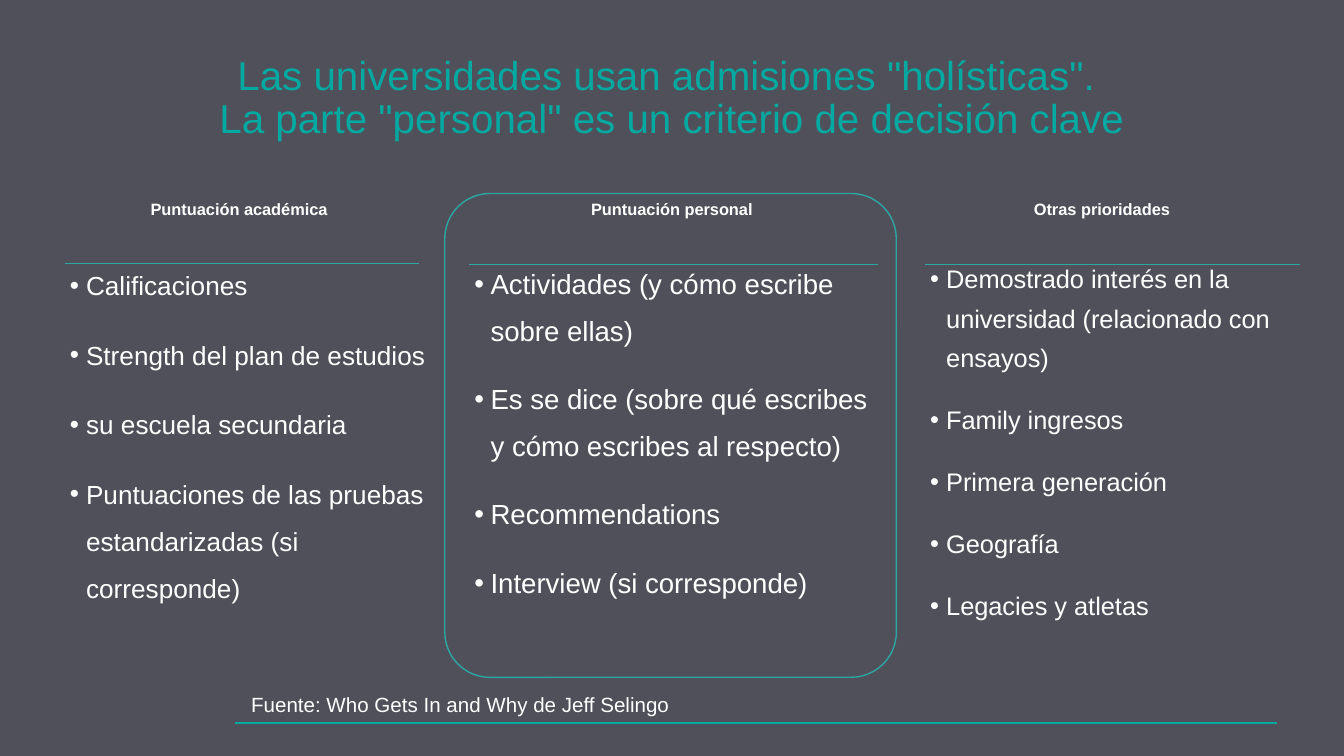
from dataclasses import dataclass

from lxml import etree
from pptx import Presentation
from pptx.dml.color import RGBColor
from pptx.enum import shapes, text
from pptx.oxml import ns
from pptx.util import Inches, Pt

FONT = "Arial"
HUES = {"back": "50505A", "teal": "04AAA2", "rule": "2DA7A1", "text": "FFFFFF"}
HEAD_W, HEAD_H, TOP = 1.94, 0.39, 1.85


@dataclass
class Column:
    head: str
    head_x: float
    left: float
    width: float
    height: float
    size: float
    lead: float
    rule_y: float
    rule_end: float
    items: list[str]


COLUMNS = [
    Column("Puntuación académica", 0.81, 0.48, 2.81, 2.74, 14, 1.5, 1.96, 3.12, [
        "Calificaciones",
        "Strength del plan de estudios",
        "su escuela secundaria",
        "Puntuaciones de las pruebas estandarizadas (si corresponde)",
    ]),
    Column("Puntuación personal", 4.03, 3.49, 3.02, 2.93, 14.8, 1.4, 1.97, 6.53, [
        "Actividades (y cómo escribe sobre ellas)",
        "Es se dice (sobre qué escribes y cómo escribes al respecto)",
        "Recommendations",
        "Interview (si corresponde)",
    ]),
    Column("Otras prioridades", 7.23, 6.88, 2.89, 3.12, 13.6, 1.3, 1.97, 9.67, [
        "Demostrado interés en la universidad (relacionado con ensayos)",
        "Family ingresos",
        "Primera generación",
        "Geografía",
        "Legacies y atletas",
    ]),
]


def color(name: str) -> RGBColor:
    return RGBColor.from_string(HUES[name])


def add_bullet(para) -> None:
    props = para._p.get_or_add_pPr()
    props.set("marL", str(Inches(0.12)))
    props.set("indent", str(-Inches(0.12)))
    tint = etree.SubElement(props, ns.qn("a:buClr"))
    etree.SubElement(tint, ns.qn("a:srgbClr"), val=HUES["text"])
    etree.SubElement(props, ns.qn("a:buFont"), typeface=FONT)
    etree.SubElement(props, ns.qn("a:buChar"), char="•")


def add_text(slide, lines: list[str], left: float, top: float, width: float,
             height: float, size: float, lead: float = 1.0, hue: str = "text",
             bold: bool = False, center: bool = False, middle: bool = False,
             bullets: bool = False, inset: float = 0.04) -> None:
    box = slide.shapes.add_textbox(
        Inches(left), Inches(top), Inches(width), Inches(height))
    frame = box.text_frame
    frame.word_wrap = True
    frame.margin_left = frame.margin_right = Inches(inset)
    frame.margin_top = frame.margin_bottom = Inches(inset)
    if middle:
        frame.vertical_anchor = text.MSO_ANCHOR.MIDDLE
    for i, line in enumerate(lines):
        para = frame.add_paragraph() if i else frame.paragraphs[0]
        para.text = line
        para.line_spacing = lead
        para.space_before = Pt(12 if i else 0)
        if center:
            para.alignment = text.PP_ALIGN.CENTER
        if bullets:
            add_bullet(para)
        font = para.font
        font.name, font.size, font.bold = FONT, Pt(size), bold
        font.color.rgb = color(hue)


def add_rule(slide, left: float, right: float, y: float, hue: str) -> None:
    rule = slide.shapes.add_connector(
        shapes.MSO_CONNECTOR.STRAIGHT,
        Inches(left), Inches(y), Inches(right), Inches(y))
    rule.line.color.rgb = color(hue)
    rule.line.width = Pt(0.75)
    etree.SubElement(rule._element.spPr, ns.qn("a:effectLst"))


def add_frame(slide) -> None:
    """Outline the personal score column."""
    frame = slide.shapes.add_shape(
        shapes.MSO_SHAPE.ROUNDED_RECTANGLE,
        Inches(3.31), Inches(1.44), Inches(3.36), Inches(3.6))
    frame.adjustments[0] = 0.1
    frame.shadow.inherit = False
    frame.fill.background()
    frame.line.color.rgb = color("rule")
    frame.line.width = Pt(0.75)


def main() -> None:
    deck = Presentation()
    deck.slide_width = Inches(10)
    deck.slide_height = Inches(10 * 9 / 16)
    slide = deck.slides.add_slide(deck.slide_layouts[6])
    slide.background.fill.solid()
    slide.background.fill.fore_color.rgb = color("back")

    add_rule(slide, 1.75, 9.5, 5.38, "teal")
    title = ('Las universidades usan admisiones "holísticas". \v'
             'La parte "personal" es un criterio de decisión clave')
    add_text(slide, [title], 1.56, 0.29, 6.88, 0.89, 21.6, 0.9, "teal",
             center=True, middle=True)
    add_text(slide, ["Fuente: Who Gets In and Why de Jeff Selingo"],
             1.77, 5.06, 8, 0.39, 11, inset=0.1)
    for col in COLUMNS:
        add_text(slide, [col.head], col.head_x, 1.4, HEAD_W, HEAD_H, 8.8, 1.3,
                 bold=True, center=True)
        add_text(slide, col.items, col.left, TOP, col.width, col.height,
                 col.size, col.lead, bullets=True)
        add_rule(slide, col.left, col.rule_end, col.rule_y, "rule")
    add_frame(slide)
    deck.save("out.pptx")


if __name__ == "__main__":
    main()
